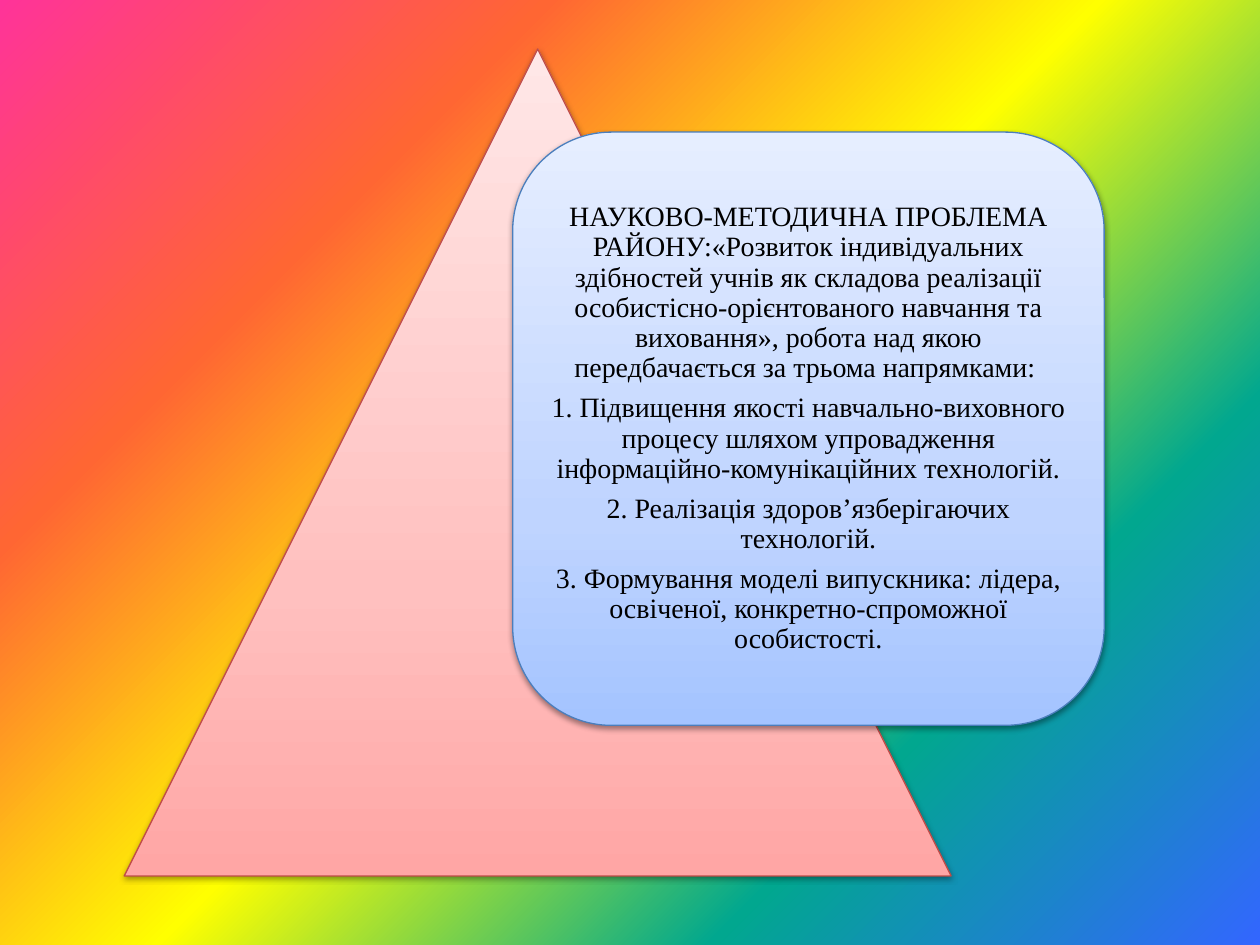
import pptx
import pptx.util
import pptx.dml.color
import pptx.enum.shapes
import pptx.enum.text
import pptx.oxml
import pptx.oxml.ns
import lxml.etree

Pt = pptx.util.Pt
RGB = pptx.dml.color.RGBColor.from_string
qn = pptx.oxml.ns.qn
SHAPE = pptx.enum.shapes.MSO_SHAPE

PARAGRAPHS = [
    "НАУКОВО-МЕТОДИЧНА ПРОБЛЕМА РАЙОНУ:«Розвиток індивідуальних здібностей учнів як складова реалізації "
    "особистісно-орієнтованого навчання та виховання», робота над якою передбачається за трьома напрямками: ",
    "1. Підвищення якості навчально-виховного процесу шляхом упровадження інформаційно-комунікаційних технологій.",
    "2. Реалізація здоров’язберігаючих технологій.",
    "3. Формування моделі випускника: лідера, освіченої, конкретно-спроможної особистості.",
]
COLORS = {
    "pink": "FF3399", "orange": "FF6633", "yellow": "FFFF00", "green": "01A78F", "blue": "3366FF",
    "red_deep": "FFA6A5", "red_mid": "FFC0BF", "red_pale": "FFE7E7", "red_line": "BF4C48",
    "blue_deep": "A4C4FF", "blue_mid": "BFD4FF", "blue_pale": "E6EEFF", "blue_line": "4B7EBC",
    "text": "000000", "shadow": "000000",
}
RAINBOW = [(0, "pink"), (25, "orange"), (50, "yellow"), (75, "green"), (100, "blue")]
CARD = (293, 75.5, 338, 339)
CARD_INSET = 16.5
SHAPES = [
    (SHAPE.ISOSCELES_TRIANGLE, (71, 28, 472.5, 472.5), "red"),
    (SHAPE.ROUNDED_RECTANGLE, CARD, "blue"),
]
FRAME_FORMAT = {
    "word_wrap": True,
    "vertical_anchor": pptx.enum.text.MSO_ANCHOR.MIDDLE,
    **{f"margin_{side}": Pt(5) for side in ("left", "top", "right", "bottom")},
}
PARAGRAPH_FORMAT = {
    "alignment": pptx.enum.text.PP_ALIGN.CENTER,
    "line_spacing": 0.9,
    "space_after": Pt(5.6),
}
FONT_FORMAT = {"name": "Times New Roman", "size": Pt(16)}


def apply(target, values):
    for name, value in values.items():
        setattr(target, name, value)


def set_gradient(fill, owner, stops, clockwise_angle):
    fill.gradient()
    fill.gradient_angle = 360 - clockwise_angle
    gs_list = owner.find(".//" + qn("a:gsLst"))
    for gs in list(gs_list):
        gs_list.remove(gs)
    for position, color in stops:
        gs = lxml.etree.SubElement(gs_list, qn("a:gs"), pos=str(position * 1000))
        lxml.etree.SubElement(gs, qn("a:srgbClr"), val=COLORS[color])


def add_shadow(sp):
    sp.shadow.inherit = False
    effects = sp._element.spPr.find(qn("a:effectLst"))
    effects.append(pptx.oxml.parse_xml(
        f'<a:outerShdw {pptx.oxml.ns.nsdecls("a")} blurRad="{Pt(3.1)}" dist="{Pt(1.6)}" '
        f'dir="5400000" rotWithShape="0"><a:srgbClr val="{COLORS["shadow"]}">'
        '<a:alpha val="38000"/></a:srgbClr></a:outerShdw>'))


prs = pptx.Presentation()
prs.slide_width, prs.slide_height = Pt(720), Pt(540)
s = prs.slides.add_slide(prs.slide_layouts[6])
set_gradient(s.background.fill, s._element, RAINBOW, 45)

for kind, box, hue in SHAPES:
    sp = s.shapes.add_shape(kind, *map(Pt, box))
    stops = [(0, f"{hue}_deep"), (35, f"{hue}_mid"), (100, f"{hue}_pale")]
    set_gradient(sp.fill, sp._element, stops, 270)
    sp.line.color.rgb = RGB(COLORS[f"{hue}_line"])
    sp.line.width = Pt(0.75)
    add_shadow(sp)

left, top, width, height = CARD
text_box = (left + CARD_INSET, top + CARD_INSET, width - 2 * CARD_INSET, height - 2 * CARD_INSET)
tf = s.shapes.add_textbox(*map(Pt, text_box)).text_frame
apply(tf, FRAME_FORMAT)
for i, text in enumerate(PARAGRAPHS):
    p = tf.add_paragraph() if i else tf.paragraphs[0]
    apply(p, PARAGRAPH_FORMAT)
    r = p.add_run()
    r.text = text
    apply(r.font, FONT_FORMAT)
    r.font.color.rgb = RGB(COLORS["text"])

prs.save("out.pptx")
